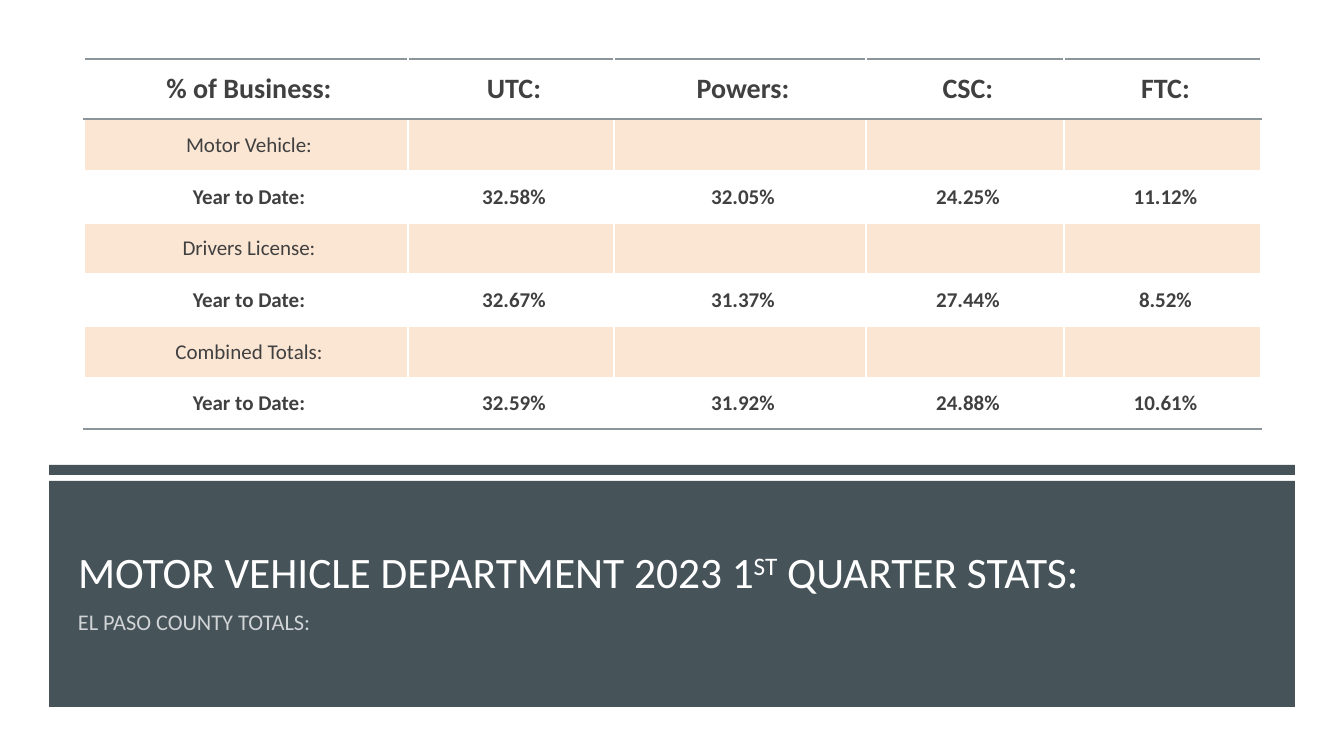
import pptx
import pptx.util
import pptx.dml.color
import pptx.enum.shapes
import pptx.enum.text
import pptx.oxml
import pptx.oxml.ns

PX = 914400 / 100.8
COLORS = {"white": "FFFFFF", "slate": "465359", "pale": "D1D4D6",
          "text": "404040", "band": "FBE6D4", "rule": "8C9599"}
ALIGN = pptx.enum.text.PP_ALIGN
ANCHOR = pptx.enum.text.MSO_ANCHOR


def px(*lengths):
    return [pptx.util.Emu(round(n * PX)) for n in lengths]


def add_text(p, text, size=15, color="text", bold=False, align=ALIGN.LEFT, raised=False):
    p.alignment = align
    r = p.add_run()
    r.text = text
    r.font.name = "Calibri"
    r.font.size = pptx.util.Pt(size)
    r.font.bold = bold
    r.font.color.rgb = pptx.dml.color.RGBColor.from_string(COLORS[color])
    if raised:
        r.font._element.set("baseline", "30000")


prs = pptx.Presentation()
prs.slide_width, prs.slide_height = px(1344, 756)
s = prs.slides.add_slide(prs.slide_layouts[5])
s.background.fill.solid()
s.background.fill.fore_color.rgb = pptx.dml.color.RGBColor.from_string(COLORS["white"])

for top, height in [(465, 10), (481, 226)]:
    sp = s.shapes.add_shape(pptx.enum.shapes.MSO_SHAPE.RECTANGLE, *px(49, top, 1246, height))
    sp.shadow.inherit = False
    sp.fill.solid()
    sp.fill.fore_color.rgb = pptx.dml.color.RGBColor.from_string(COLORS["slate"])
    sp.line.fill.background()

title = s.shapes.title
s.shapes._spTree.append(title._element)
title.left, title.top, title.width, title.height = px(68, 504, 1209, 99)
tf = title.text_frame
tf.word_wrap = True
tf.auto_size = pptx.enum.text.MSO_AUTO_SIZE.NONE
tf.vertical_anchor = ANCHOR.BOTTOM
p = tf.paragraphs[0]
p.line_spacing = 0.9
for text, raised in [("MOTOR VEHICLE DEPARTMENT 2023 1", False), ("ST", True),
                     (" QUARTER STATS:", False)]:
    add_text(p, text, size=31, color="white", raised=raised)

subtitle = s.shapes.add_textbox(*px(68, 603, 1209, 53))
tf = subtitle.text_frame
tf.word_wrap = True
p = tf.paragraphs[0]
p.space_before = pptx.util.Pt(3)
p.space_after = pptx.util.Pt(6)
add_text(p, "EL PASO COUNTY TOTALS:", size=16, color="pale")

rows = [
    ["% of Business:", "UTC:", "Powers:", "CSC:", "FTC:"],
    ["Motor Vehicle:", "", "", "", ""],
    ["Year to Date:", "32.58%", "32.05%", "24.25%", "11.12%"],
    ["Drivers License:", "", "", "", ""],
    ["Year to Date:", "32.67%", "31.37%", "27.44%", "8.52%"],
    ["Combined Totals:", "", "", "", ""],
    ["Year to Date:", "32.59%", "31.92%", "24.88%", "10.61%"],
]
widths = px(324, 206, 252, 198, 197)
heights = px(60, *[52, 52, 51] * 2)
table = s.shapes.add_table(len(rows), len(widths), *px(84, 59, 1177, 370)).table
table.first_row = False
table.horz_banding = False
for column, width in zip(table.columns, widths):
    column.width = width
for i, values in enumerate(rows):
    table.rows[i].height = heights[i]
    banded = i % 2 == 1
    edges = {0: ["lnB", "lnT"], 1: ["lnT"], len(rows) - 1: ["lnB"]}.get(i, [])
    for j, value in enumerate(values):
        cell = table.cell(i, j)
        cell.fill.solid()
        cell.fill.fore_color.rgb = pptx.dml.color.RGBColor.from_string(
            COLORS["band" if banded else "white"])
        if value:
            cell.vertical_anchor = ANCHOR.MIDDLE
            cell.margin_left, cell.margin_top, cell.margin_right, cell.margin_bottom = px(
                23, 11, 17, 11)
            add_text(cell.text_frame.paragraphs[0], value, size=15 if i else 20,
                     bold=not banded, align=ALIGN.CENTER)
        for edge in edges:
            cell._tc.get_or_add_tcPr().insert(0, pptx.oxml.parse_xml(
                f'<a:{edge} {pptx.oxml.ns.nsdecls("a")} w="12700"><a:solidFill>'
                f'<a:srgbClr val="{COLORS["rule"]}"/></a:solidFill></a:{edge}>'))

prs.save("out.pptx")
